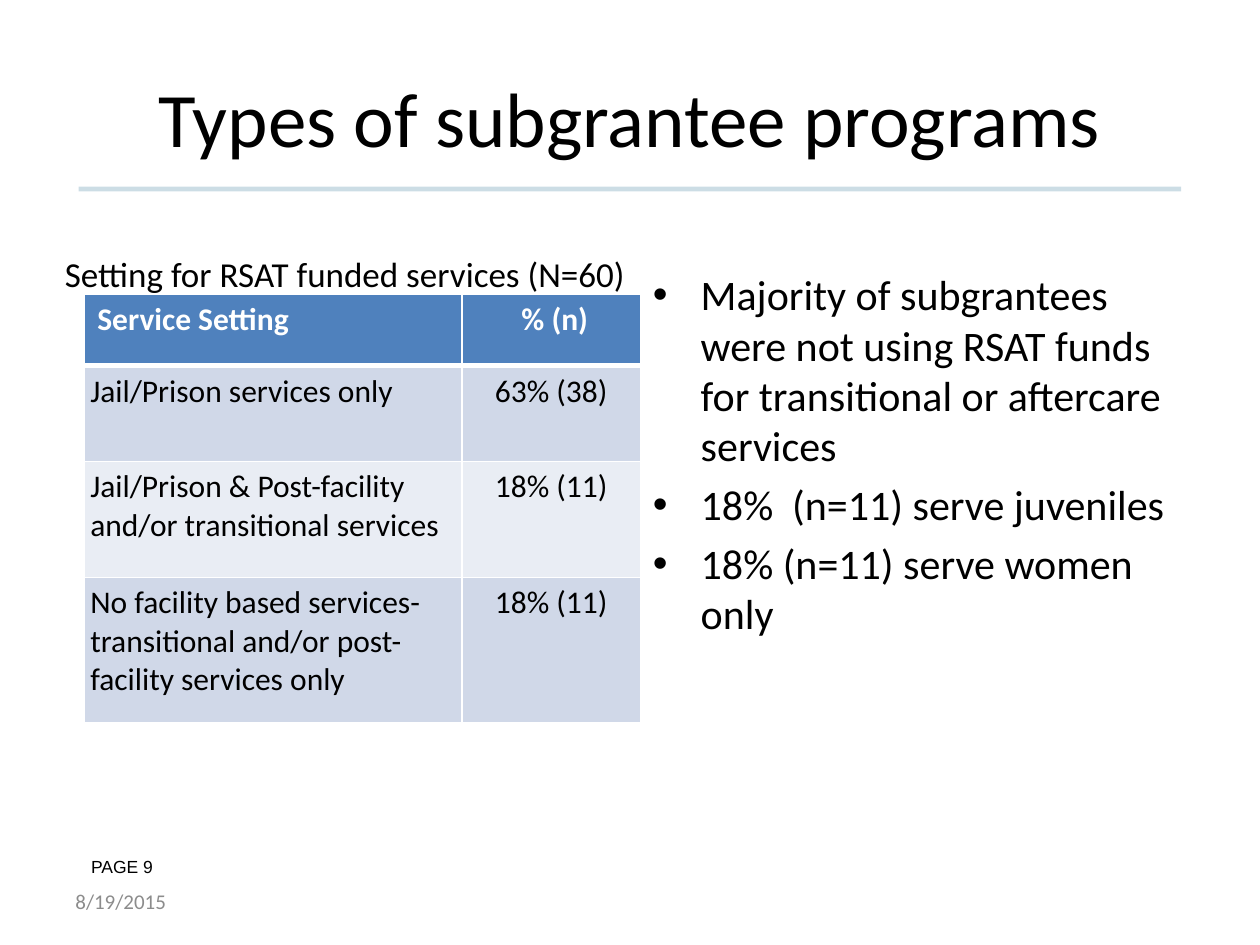
from lxml.etree import SubElement
from pptx import Presentation
from pptx.dml.color import RGBColor
from pptx.enum.shapes import MSO_CONNECTOR
from pptx.enum.text import MSO_ANCHOR, PP_ALIGN
from pptx.oxml.ns import qn
from pptx.util import Inches, Pt

UNIT = Inches(10) // 120
BLACK, WHITE = "000000", "FFFFFF"


def style(paragraph, size, color, face="Calibri", bold=False, align=PP_ALIGN.LEFT):
    paragraph.alignment = align
    font = paragraph.font
    font.size, font.name, font.bold = Pt(size), face, bold
    font.color.rgb = RGBColor.from_string(color)


def add_text(grid_box, text, anchor=MSO_ANCHOR.TOP):
    box = slide.shapes.add_textbox(*(round(n * UNIT) for n in grid_box))
    frame = box.text_frame
    frame.word_wrap = True
    frame.vertical_anchor = anchor
    frame.text = text
    return frame.paragraphs


deck = Presentation()
deck.slide_width, deck.slide_height = 120 * UNIT, 90 * UNIT
slide = deck.slides.add_slide(deck.slide_layouts[6])

page = add_text((7.5, 80.9, 12.7, 6.2), "PAGE 9")[0]
style(page, 10, BLACK, "Arial")

rule = slide.shapes.add_connector(
    MSO_CONNECTOR.STRAIGHT, round(7.5 * UNIT), 18 * UNIT, round(112.5 * UNIT), 18 * UNIT
)
rule.line.width = Pt(2.75)
rule.line.color.rgb = RGBColor.from_string("005581")
rule_color = rule.line.fill._xPr.find(".//" + qn("a:srgbClr"))
SubElement(rule_color, qn("a:alpha"), val="20000")
SubElement(rule._element.spPr, qn("a:effectLst"))

title = add_text((6, 3.6, 108, 15), "Types of subgrantee programs", MSO_ANCHOR.MIDDLE)[0]
style(title, 44, BLACK, align=PP_ALIGN.CENTER)

caption = add_text((5, 20.2, 57, 8.4), "Setting for RSAT funded services (N=60)", MSO_ANCHOR.BOTTOM)[0]
style(caption, 20, BLACK)

settings = [
    (" Service Setting", " % (n)"),
    ("Jail/Prison services only", "63% (38)"),
    ("Jail/Prison & Post-facility and/or transitional services", "18% (11)"),
    ("No facility based services- transitional and/or post-facility services only", "18% (11)"),
]
row_heights = [6.84, 9.12, 11.04, 13.8]
row_fills = ["4F81BD", "D0D8E8", "E9EDF4", "D0D8E8"]
table = slide.shapes.add_table(
    4, 2, 8 * UNIT, 28 * UNIT, 53 * UNIT, round(sum(row_heights) * UNIT)
).table
for column, width in zip(table.columns, (36, 17)):
    column.width = width * UNIT

for r, (entries, height, fill) in enumerate(zip(settings, row_heights, row_fills)):
    table.rows[r].height = round(height * UNIT)
    for c, entry in enumerate(entries):
        cell = table.cell(r, c)
        cell.text = entry
        cell.margin_left = cell.margin_right = Inches(0.05)
        cell.margin_top = cell.margin_bottom = Inches(0.05)
        style(
            cell.text_frame.paragraphs[0],
            18,
            BLACK if r else WHITE,
            bold=r == 0,
            align=PP_ALIGN.CENTER if c else PP_ALIGN.LEFT,
        )
        borders = cell._tc.get_or_add_tcPr()
        for side in "LRTB":
            thick = (r, side) in ((0, "B"), (1, "T"))
            edge = SubElement(borders, qn("a:ln" + side), w=str(Pt(3 if thick else 1)))
            SubElement(SubElement(edge, qn("a:solidFill")), qn("a:srgbClr"), val=WHITE)
        cell.fill.solid()
        cell.fill.fore_color.rgb = RGBColor.from_string(fill)

findings = [
    "Majority of subgrantees were not using RSAT funds for transitional or aftercare services",
    "18%  (n=11) serve juveniles",
    "18% (n=11) serve women only",
]
for i, finding in enumerate(add_text((61, 25, 53, 55.4), "\n".join(findings))):
    if i:
        finding.space_before = Pt(4.8)
    indent = finding._p.get_or_add_pPr()
    indent.set("marL", str(Inches(0.38)))
    indent.set("indent", str(-Inches(0.38)))
    SubElement(indent, qn("a:buFont"), typeface="Arial")
    SubElement(indent, qn("a:buChar"), char="•")
    style(finding, 24, BLACK)

date = add_text((6, 83.4, 28, 4.8), "8/19/2015", MSO_ANCHOR.MIDDLE)[0]
style(date, 12, "8C8C8C")

deck.save("out.pptx")
